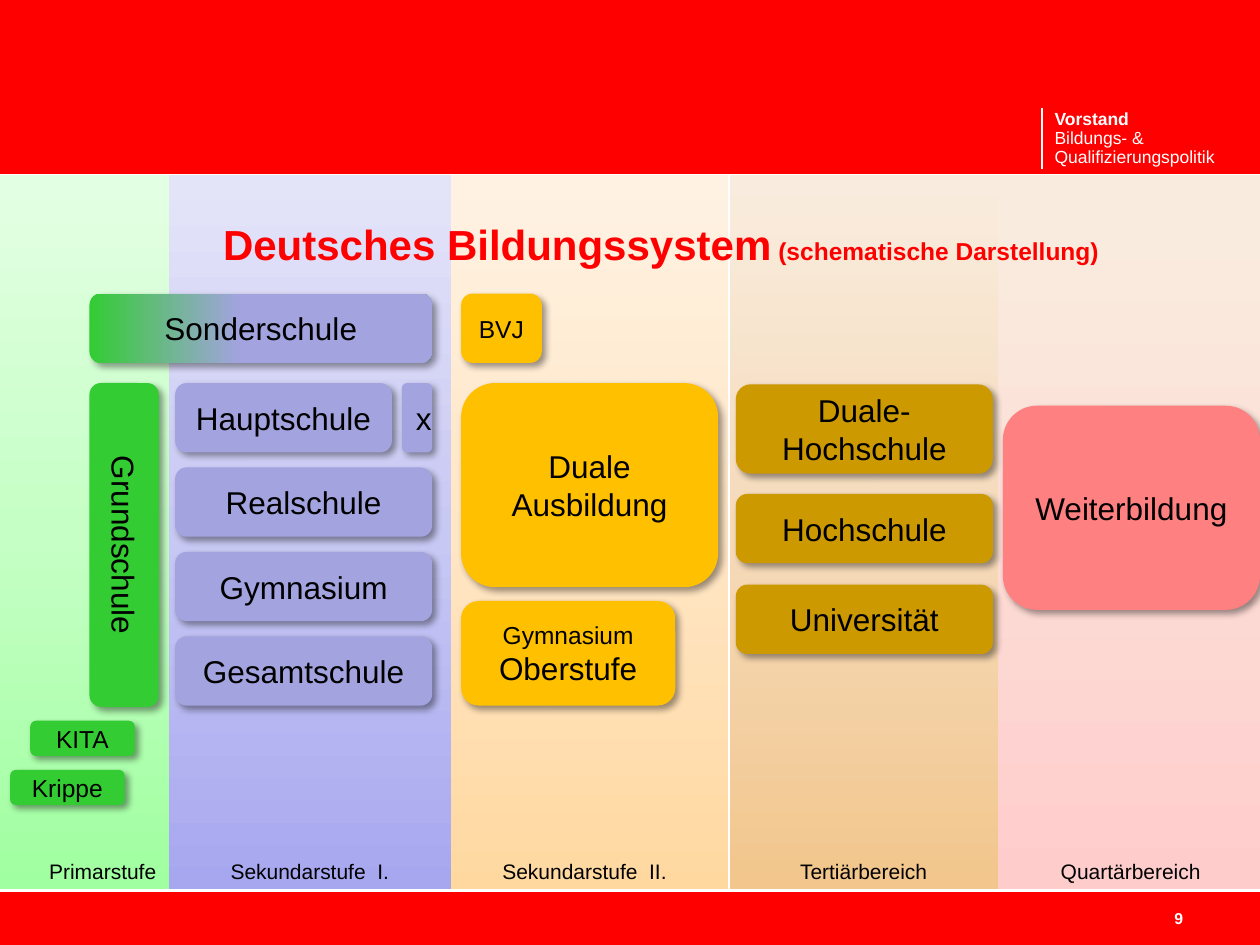
from pptx import Presentation
from pptx.dml.color import RGBColor
from pptx.enum.shapes import MSO_CONNECTOR, MSO_SHAPE
from pptx.enum.text import MSO_ANCHOR, MSO_AUTO_SIZE, PP_ALIGN
from pptx.oxml.ns import qn
from pptx.oxml.xmlchemy import OxmlElement
from pptx.util import Inches, Pt

RED, WHITE, BLACK = "FF0000", "FFFFFF", "000000"
GREEN, LILAC, AMBER, OCHRE, ROSE = "33CC33", "A3A3E0", "FFC000", "CC9900", "FF8080"
TOP, TALL = 1.39, 5.67
ROW = 0.55
WIDE = 2.04


def tint(code):
    return RGBColor.from_string(code)


def place(box):
    return [Inches(side) for side in box]


def node(home, tag, **attrs):
    part = OxmlElement(tag)
    for key, value in attrs.items():
        part.set(key, str(value))
    home.append(part)
    return part


def blend(shape, stops, angle):
    shape.fill.gradient()
    shape.fill.gradient_angle = angle
    chain = shape.fill._xPr.find(qn("a:gradFill")).find(qn("a:gsLst"))
    for old in list(chain):
        chain.remove(old)
    for pos, code in stops:
        node(node(chain, "a:gs", pos=pos * 1000), "a:srgbClr", val=code)


def block(slide, box, fill, kind=MSO_SHAPE.RECTANGLE, angle=90):
    shape = slide.shapes.add_shape(kind, *place(box))
    if isinstance(fill, str):
        shape.fill.solid()
        shape.fill.fore_color.rgb = tint(fill)
    else:
        blend(shape, fill, angle)
    shape.line.fill.background()
    shape.shadow.inherit = False
    return shape


def write(para, text, size, code=BLACK, bold=False):
    run = para.add_run()
    run.text = text
    run.font.size = Pt(size)
    run.font.name = "Arial"
    run.font.bold = bold
    run.font.color.rgb = tint(code)


def strip(frame):
    frame.margin_left = frame.margin_right = 0
    frame.margin_top = frame.margin_bottom = 0
    frame.word_wrap = True


def card(slide, box, fill, lines, size=18, angle=0):
    shape = block(slide, box, fill, MSO_SHAPE.ROUNDED_RECTANGLE, angle)
    cast = node(shape._element.spPr.find(qn("a:effectLst")), "a:outerShdw",
                blurRad=Pt(4), dist=Pt(3), dir=45 * 60000, algn="tl", rotWithShape=0)
    node(node(cast, "a:srgbClr", val=BLACK), "a:alpha", val=40000)
    shape.text_frame.vertical_anchor = MSO_ANCHOR.MIDDLE
    para = shape.text_frame.paragraphs[0]
    para.alignment = PP_ALIGN.CENTER
    if isinstance(lines, str):
        lines = [(lines, size)]
    for spot, (text, points) in enumerate(lines):
        if spot:
            para.add_line_break()
        write(para, text, points)
    return shape


def stage(slide, box, label, stops, align=PP_ALIGN.CENTER):
    shape = block(slide, box, stops)
    shape.text_frame.vertical_anchor = MSO_ANCHOR.BOTTOM
    para = shape.text_frame.paragraphs[0]
    para.alignment = align
    write(para, label, 12)


def header(slide, box):
    x, y, w, h = box
    block(slide, box, RED)
    rule = slide.shapes.add_connector(
        MSO_CONNECTOR.STRAIGHT, *place((x + 8.27, y + 0.86, x + 8.27, y + 1.34)))
    rule.line.color.rgb = tint(WHITE)
    rule.line.width = Pt(1)
    node(rule._element.spPr, "a:effectLst")
    frame = slide.shapes.add_textbox(*place((x + 8.37, y + 0.77, 2.36, 0.72))).text_frame
    strip(frame)
    frame.auto_size = MSO_AUTO_SIZE.SHAPE_TO_FIT_TEXT
    head = frame.paragraphs[0]
    head.line_spacing = 1.5
    write(head, "Vorstand", 10, WHITE, True)
    unit = frame.add_paragraph()
    unit.line_spacing = Pt(11)
    write(unit, "Bildungs- & ", 10, WHITE)
    unit.add_line_break()
    write(unit, "Qualifizierungspolitik", 10, WHITE)


def footer(slide, box):
    x, y, w, h = box
    block(slide, box, RED)
    frame = slide.shapes.add_textbox(*place((x + 9.28, y + 0.13, 0.15, 0.14))).text_frame
    strip(frame)
    frame.word_wrap = False
    para = frame.paragraphs[0]
    para.alignment = PP_ALIGN.CENTER
    write(para, "9", 9, WHITE, True)


def title(slide, box):
    shape = slide.shapes.title
    shape.left, shape.top, shape.width, shape.height = place(box)
    slide.shapes._spTree.append(shape._element)
    frame = shape.text_frame
    strip(frame)
    frame.vertical_anchor = MSO_ANCHOR.TOP
    para = frame.paragraphs[0]
    para.alignment = PP_ALIGN.LEFT
    para.line_spacing = Pt(26)
    write(para, "Deutsches Bildungssystem", 24, RED, True)
    write(para, " (schematische Darstellung)", 14, RED, True)


def primary(slide, box):
    x, y, w, h = box
    card(slide, (x + 0.08, y + 4.72, 0.91, 0.28), GREEN, "Krippe", 14)
    card(slide, (x + 0.24, y + 4.33, 0.83, 0.28), GREEN, "KITA", 14)
    card(slide, (x - 0.3, y + 2.66, 2.57, ROW), GREEN, "Grundschule").rotation = 90
    card(slide, (x + 0.71, y + 0.94, 2.72, ROW), [(0, GREEN), (44, LILAC)], "Sonderschule")


def lower(slide, box):
    x, y, w, h = box
    names = "Hauptschule", "Realschule", "Gymnasium", "Gesamtschule"
    for row, name in enumerate(names):
        width = WIDE if row else 1.72
        card(slide, (x + 0.05, y + 1.65 + row * 0.67, width, ROW), LILAC, name)
    card(slide, (x + 1.85, y + 1.65, 0.24, ROW), LILAC, "x")


def upper(slide, box):
    x, y, w, h = box
    left = x + 0.16
    card(slide, (left, y + 3.38, 1.7, 0.83), AMBER, [("Gymnasium", 14), ("Oberstufe", 18)])
    card(slide, (left, y + 0.94, 0.64, ROW), AMBER, "BVJ", 14)
    card(slide, (left, y + 1.65, WIDE, 1.62), AMBER, "Duale Ausbildung")


def higher(slide, box):
    x, y, w, h = box
    rows = (1.66, 0.71, "Duale-Hochschule"), (2.53, ROW, "Hochschule"), (3.25, ROW, "Universität")
    for drop, tall, name in rows:
        card(slide, (x + 0.05, y + drop, WIDE, tall), OCHRE, name)


def further(slide, box):
    x, y, w, h = box
    card(slide, (x + 0.05, y + 1.83, WIDE, 1.62), ROSE, "Weiterbildung")


def main():
    deck = Presentation()
    deck.slide_width, deck.slide_height = Inches(10), Inches(7.5)
    slide = deck.slides.add_slide(deck.slide_layouts[5])
    footer(slide, (0, 7.08, 10, 0.42))
    header(slide, (0, 0, 10, 1.38))
    first, second, third, fourth, fifth = [
        (x, TOP, w, TALL)
        for x, w in ((0, 1.34), (1.34, 2.24), (3.5, 2.28), (5.79, 2.13), (7.91, 2.13))]
    stage(slide, fifth, "Quartärbereich", [(0, "FFCCCC"), (94, "F9ECDE")])
    stage(slide, third, "Sekundarstufe  II.", [(0, "FFD8A0"), (50, "FFE6C5"), (100, "FFF2E3")])
    stage(slide, first, "Primarstufe", [(0, "A0FFA0"), (50, "C5FFC5"), (100, "E3FFE3")],
          PP_ALIGN.RIGHT)
    stage(slide, second, "Sekundarstufe  I.", [(0, "A7A7F0"), (50, "C8C8F4"), (100, "E4E4F9")])
    stage(slide, fourth, "Tertiärbereich", [(0, "F2C68C"), (50, "F5DABA"), (100, "F9ECDE")])
    title(slide, (1.77, 1.77, 7.93, 0.79))
    primary(slide, first)
    lower(slide, second)
    upper(slide, third)
    higher(slide, fourth)
    further(slide, fifth)
    deck.save("out.pptx")


if __name__ == "__main__":
    main()
